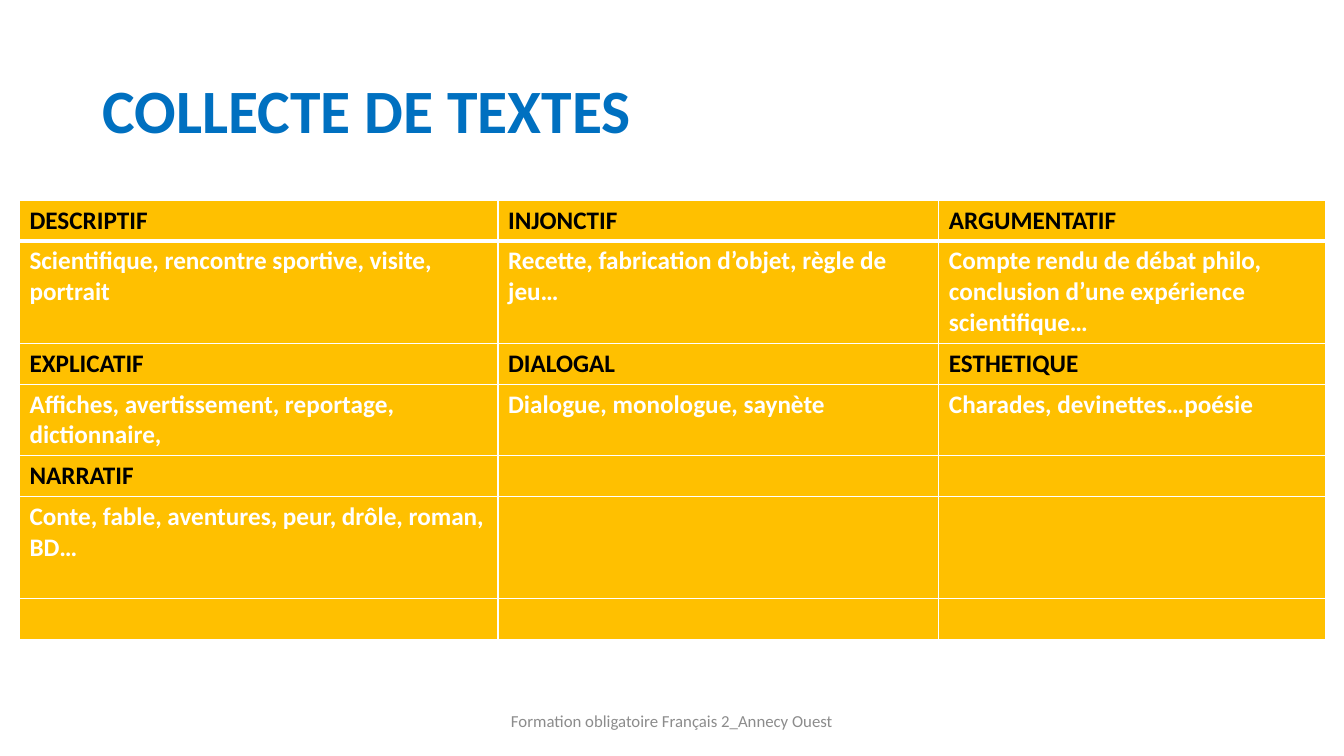
from lxml import etree
from pptx import Presentation
from pptx import util as u
from pptx.dml.color import RGBColor
from pptx.enum import text
from pptx.oxml import ns

COLORS = {"title": "0070C0", "heading": "000000", "body": "FFFFFF",
          "cell": "FFC000", "border": "FFFFFF", "footer": "8C8C8C"}


def write(paragraph, wording, color, size, bold):
    run = paragraph.add_run()
    run.text = wording
    run.font.color.rgb = RGBColor.from_string(COLORS[color])
    formats = {"name": "Calibri", "size": u.Pt(size), "bold": bold}
    for name, value in formats.items():
        setattr(run.font, name, value)


def add_border(cell, position, side, points):
    line = etree.Element(ns.qn(f"a:ln{side}"), w=str(u.Pt(points)))
    fill = etree.SubElement(line, ns.qn("a:solidFill"))
    etree.SubElement(fill, ns.qn("a:srgbClr"), val=COLORS["border"])
    cell._tc.get_or_add_tcPr().insert(position, line)


presentation = Presentation()
presentation.slide_width = u.Cm(33.87)
presentation.slide_height = u.Cm(19.05)
slide = presentation.slides.add_slide(presentation.slide_layouts[6])

labels = [
    ("COLLECTE DE TEXTES", (2.33, 1.01, 29.21, 3.68), "title", 44, True,
     {"alignment": text.PP_ALIGN.LEFT, "line_spacing": 0.9}),
    ("Formation obligatoire Français 2_Annecy Ouest", (11.22, 17.66, 11.43, 1.01),
     "footer", 12, False, {"alignment": text.PP_ALIGN.CENTER}),
]
for wording, box, color, size, bold, formats in labels:
    shape = slide.shapes.add_textbox(*map(u.Cm, box))
    shape.text_frame.word_wrap = True
    shape.text_frame.vertical_anchor = text.MSO_ANCHOR.MIDDLE
    paragraph = shape.text_frame.paragraphs[0]
    for name, value in formats.items():
        setattr(paragraph, name, value)
    write(paragraph, wording, color, size, bold)

rows = [
    ("DESCRIPTIF", "INJONCTIF", "ARGUMENTATIF"),
    ("Scientifique, rencontre sportive, visite, portrait",
     "Recette, fabrication d’objet, règle de jeu…",
     "Compte rendu de débat philo, conclusion d’une expérience scientifique…"),
    ("EXPLICATIF", "DIALOGAL", "ESTHETIQUE"),
    ("Affiches, avertissement, reportage, dictionnaire,",
     "Dialogue, monologue, saynète",
     "Charades, devinettes…poésie"),
    ("NARRATIF", "", ""),
    ("Conte, fable, aventures, peur, drôle, roman, BD…", "", ""),
    ("", "", ""),
]
widths = [12.06, 11.11, 9.74]
heights = [1.03, 2.58, 1.03, 1.8, 1.03, 2.58, 1.03]

frame = slide.shapes.add_table(len(rows), len(widths), u.Cm(0.49), u.Cm(5.04),
                               u.Cm(sum(widths)), u.Cm(sum(heights)))
table = frame.table
for column, width in zip(table.columns, widths):
    column.width = u.Cm(width)
for row, height in zip(table.rows, heights):
    row.height = u.Cm(height)

for row_index, row in enumerate(rows):
    color = "body" if row_index % 2 else "heading"
    borders = {"L": 1, "R": 1, "T": 3 if row_index == 1 else 1,
               "B": 3 if row_index == 0 else 1}
    for column_index, wording in enumerate(row):
        cell = table.cell(row_index, column_index)
        cell.fill.solid()
        cell.fill.fore_color.rgb = RGBColor.from_string(COLORS["cell"])
        for position, (side, points) in enumerate(borders.items()):
            add_border(cell, position, side, points)
        if wording:
            write(cell.text_frame.paragraphs[0], wording, color, 18, True)

presentation.save("out.pptx")
